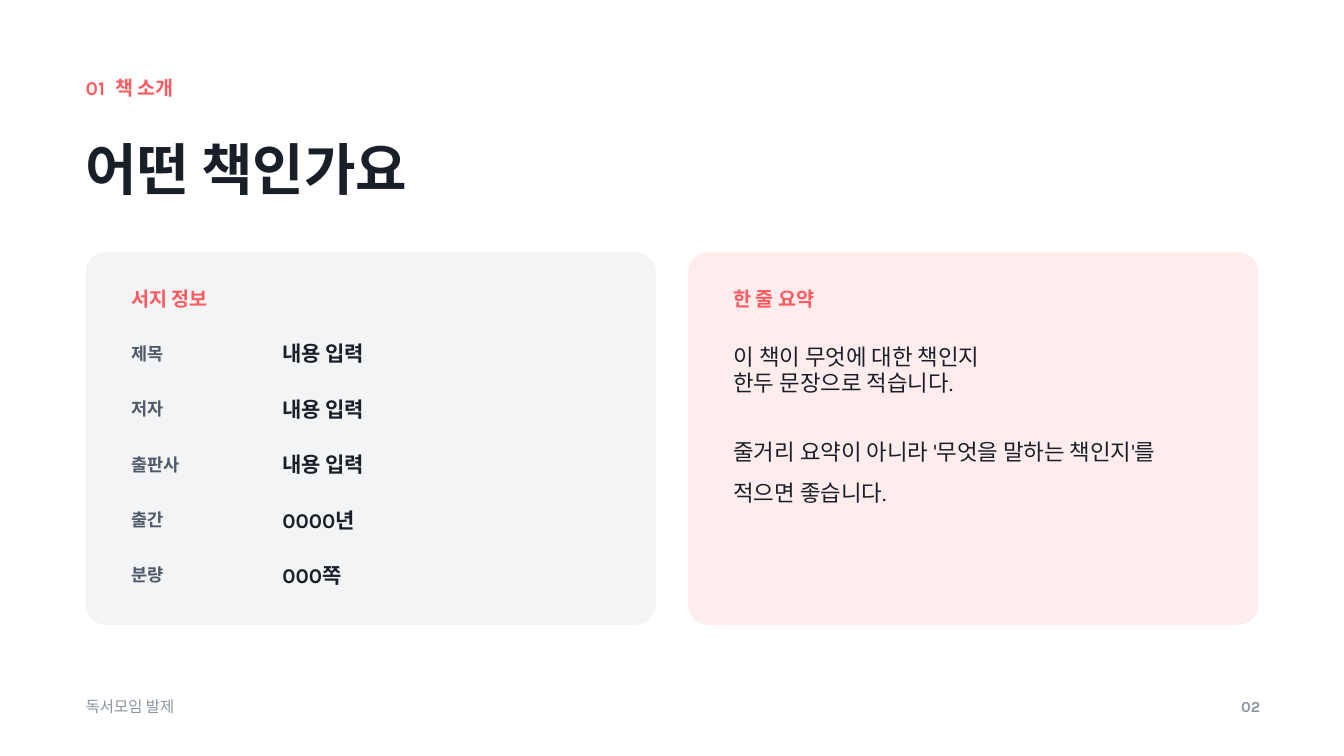
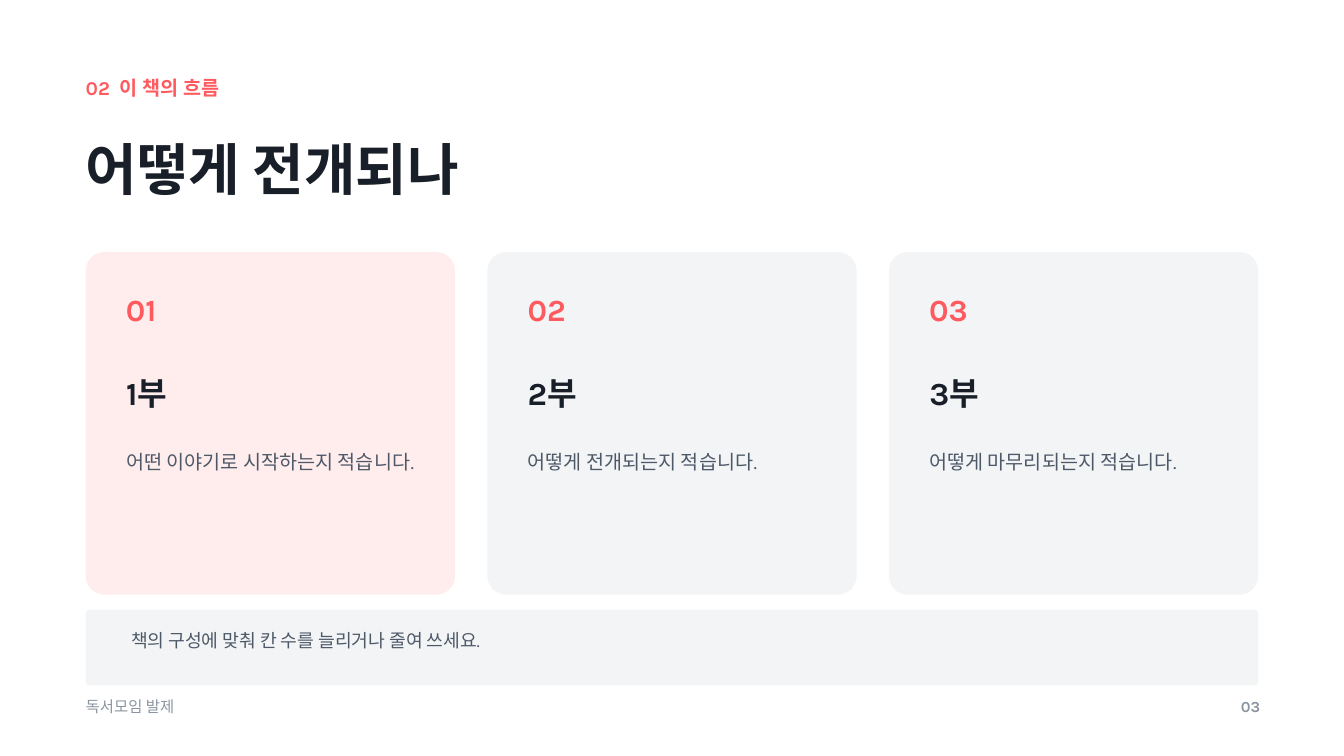
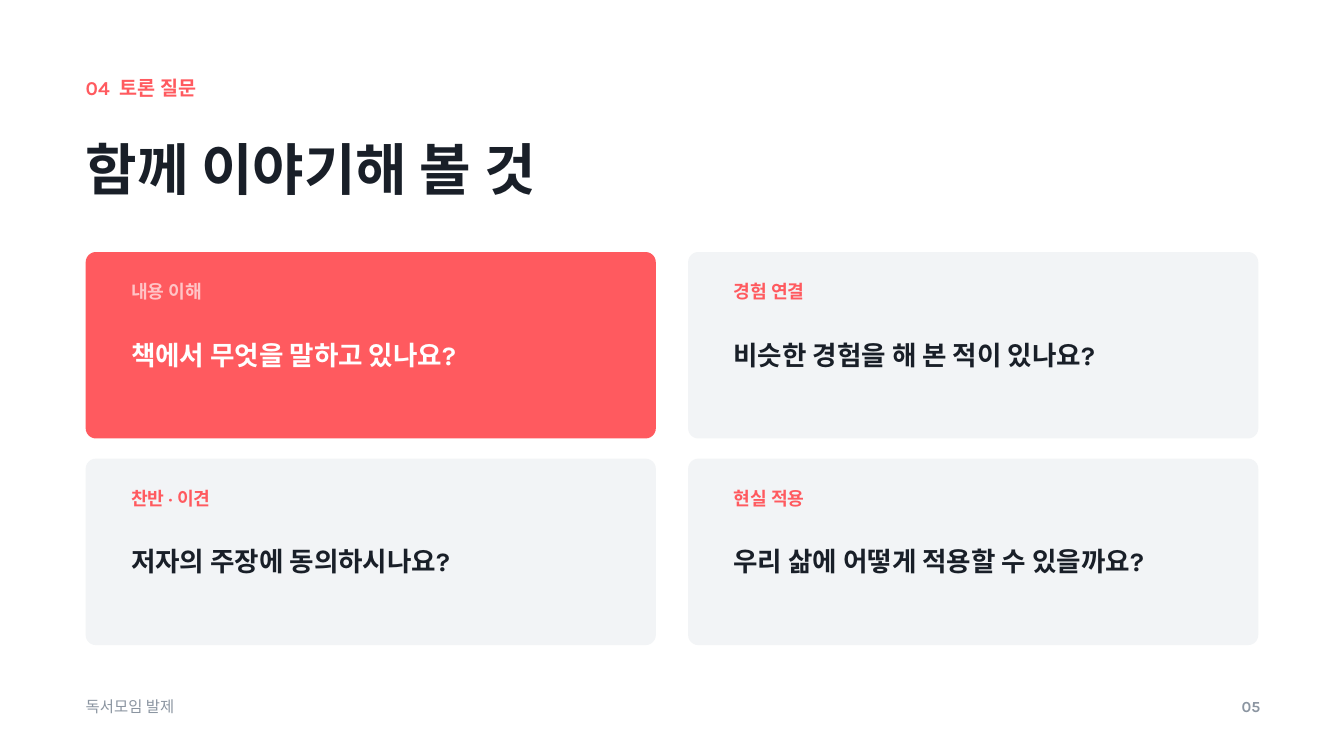
from pptx import Presentation
from pptx.dml.color import RGBColor
from pptx.enum.shapes import MSO_SHAPE as SHAPE
from pptx.enum.text import MSO_ANCHOR as ANCHOR, MSO_AUTO_SIZE as AUTO, PP_ALIGN as ALIGN
from pptx.util import Inches, Pt

FONT = "Karla"
CORAL, PINK, PALE_CORAL = "FF5A5F", "FFEDED", "FFC4C6"
INK, SLATE, MUTED = "191F28", "4E5968", "8B95A1"
GRAY, WHITE = "F2F4F6", "FFFFFF"

LEFT, WIDTH, GUTTER = 0.85, 11.63, 0.32
TOP = 2.5
FOOTER_TOP = 6.92


def color(value):
    return RGBColor.from_string(value)


def columns(count):
    """Left edges and common width of equal columns."""
    width = (WIDTH - GUTTER * (count - 1)) / count
    return [LEFT + i * (width + GUTTER) for i in range(count)], width


class Deck:
    def __init__(self):
        self.prs = Presentation()
        self.prs.slide_width = Inches(13.33)
        self.prs.slide_height = Inches(7.5)
        self.s = None

    def slide(self, number, section, title, page):
        """Start a slide with its section label, title and footer."""
        self.s = self.prs.slides.add_slide(self.prs.slide_layouts[5])
        fill = self.s.background.fill
        fill.solid()
        fill.fore_color.rgb = color(WHITE)
        self.text(f"{number}  {section}", LEFT, 0.75, 7, 0.32, 14, CORAL, bold=True)
        sp = self.s.shapes.title
        sp.left, sp.top = Inches(LEFT), Inches(1.2)
        sp.width, sp.height = Inches(10.8), Inches(1.53)
        self.set_text(sp.text_frame, [title], 40, INK, True, 1.2)
        self.text("독서모임 발제", LEFT, FOOTER_TOP, 8, 0.3, 11, MUTED)
        self.text(page, 11.5, FOOTER_TOP, 1, 0.3, 11, MUTED, bold=True, align=ALIGN.RIGHT)

    def set_text(self, tf, lines, size, ink, bold=False, spacing=None, align=ALIGN.LEFT):
        """Fill a text frame, one paragraph for each line."""
        tf.margin_left = tf.margin_top = tf.margin_right = tf.margin_bottom = 0
        tf.word_wrap = True
        tf.auto_size = AUTO.NONE
        tf.vertical_anchor = ANCHOR.TOP
        for i, line in enumerate(lines):
            p = tf.add_paragraph() if i else tf.paragraphs[0]
            p.text = line
            p.alignment = align
            if spacing:
                p.line_spacing = spacing
            p.font.name, p.font.size, p.font.bold = FONT, Pt(size), bold
            p.font.color.rgb = color(ink)

    def text(self, text, x, y, w, h, size, ink, **style):
        """Add a text box; a list of strings gives several paragraphs."""
        sp = self.s.shapes.add_textbox(Inches(x), Inches(y), Inches(w), Inches(h))
        lines = [text] if isinstance(text, str) else text
        self.set_text(sp.text_frame, lines, size, ink, **style)
        return sp.text_frame

    def card(self, x, y, w, h, fill=GRAY):
        sp = self.s.shapes.add_shape(SHAPE.ROUNDED_RECTANGLE, Inches(x), Inches(y),
                                     Inches(w), Inches(h))
        sp.adjustments[0] = 0.055
        sp.shadow.inherit = False
        sp.fill.solid()
        sp.fill.fore_color.rgb = color(fill)
        sp.line.fill.background()


def book_slide(deck):
    deck.slide("01", "책 소개", "어떤 책인가요", "02")
    (info_x, summary_x), w = columns(2)
    pad = 0.45

    # Bibliographic details
    deck.card(info_x, TOP, w, 3.7)
    deck.text("서지 정보", info_x + pad, 2.85, 3, 0.32, 14, CORAL, bold=True)
    details = [("제목", "내용 입력"), ("저자", "내용 입력"), ("출판사", "내용 입력"),
               ("출간", "0000년"), ("분량", "000쪽")]
    for i, (label, value) in enumerate(details):
        y = 3.4 + 0.55 * i
        deck.text(label, info_x + pad, y, 1.4, 0.3, 12.5, SLATE, bold=True)
        deck.text(value, 2.8, y - 0.02, 3.26, 0.32, 15, INK, bold=True)

    # One-line summary
    deck.card(summary_x, TOP, w, 3.7, PINK)
    deck.text("한 줄 요약", summary_x + pad, 2.85, 3.5, 0.32, 14, CORAL, bold=True)
    summary = ["이 책이 무엇에 대한 책인지", "한두 문장으로 적습니다.",
               "줄거리 요약이 아니라 '무엇을 말하는 책인지'를 적으면 좋습니다."]
    tf = deck.text(summary, summary_x + pad, 3.4, w - 2 * pad, 2.4, 16, INK)
    advice = tf.paragraphs[-1]
    advice.space_before = Pt(19)
    advice.line_spacing = 1.55


def flow_slide(deck):
    deck.slide("02", "이 책의 흐름", "어떻게 전개되나", "03")
    lefts, w = columns(3)
    pad = 0.4

    # Three parts
    parts = ["어떤 이야기로 시작하는지 적습니다.", "어떻게 전개되는지 적습니다.",
             "어떻게 마무리되는지 적습니다."]
    for i, (x, body) in enumerate(zip(lefts, parts), 1):
        deck.card(x, TOP, w, 3.4, PINK if i == 1 else GRAY)
        deck.text(f"{i:02}", x + pad, 2.88, 1.5, 0.4, 22, CORAL, bold=True)
        deck.text(f"{i}부", x + pad, 3.7, w - 2 * pad, 0.5, 23, INK, bold=True)
        deck.text(body, x + pad, 4.35, w - 2 * pad, 1.3, 14, SLATE, spacing=1.5)

    # Hint bar
    deck.card(LEFT, 6.05, WIDTH, 0.75)
    deck.text("책의 구성에 맞춰 칸 수를 늘리거나 줄여 쓰세요.",
              LEFT + 0.45, 6.24, WIDTH - 0.9, 0.4, 13, SLATE)


def questions_slide(deck):
    deck.slide("04", "토론 질문", "함께 이야기해 볼 것", "05")
    lefts, w = columns(2)
    pad = 0.45

    # Two-by-two question cards, the first one highlighted
    questions = [("내용 이해", "책에서 무엇을 말하고 있나요?"),
                 ("경험 연결", "비슷한 경험을 해 본 적이 있나요?"),
                 ("찬반 · 이견", "저자의 주장에 동의하시나요?"),
                 ("현실 적용", "우리 삶에 어떻게 적용할 수 있을까요?")]
    for i, (topic, question) in enumerate(questions):
        x, y = lefts[i % 2], TOP + 2.05 * (i // 2)
        fill, topic_ink, ink = (GRAY, CORAL, INK) if i else (CORAL, PALE_CORAL, WHITE)
        deck.card(x, y, w, 1.85, fill)
        deck.text(topic, x + pad, y + 0.28, 3, 0.32, 13, topic_ink, bold=True)
        deck.text(question, x + pad, y + 0.75, w - 2 * pad, 0.8, 19, ink,
                  bold=True, spacing=1.35)


def main():
    deck = Deck()
    book_slide(deck)
    flow_slide(deck)
    questions_slide(deck)
    deck.prs.save("out.pptx")


if __name__ == "__main__":
    main()
